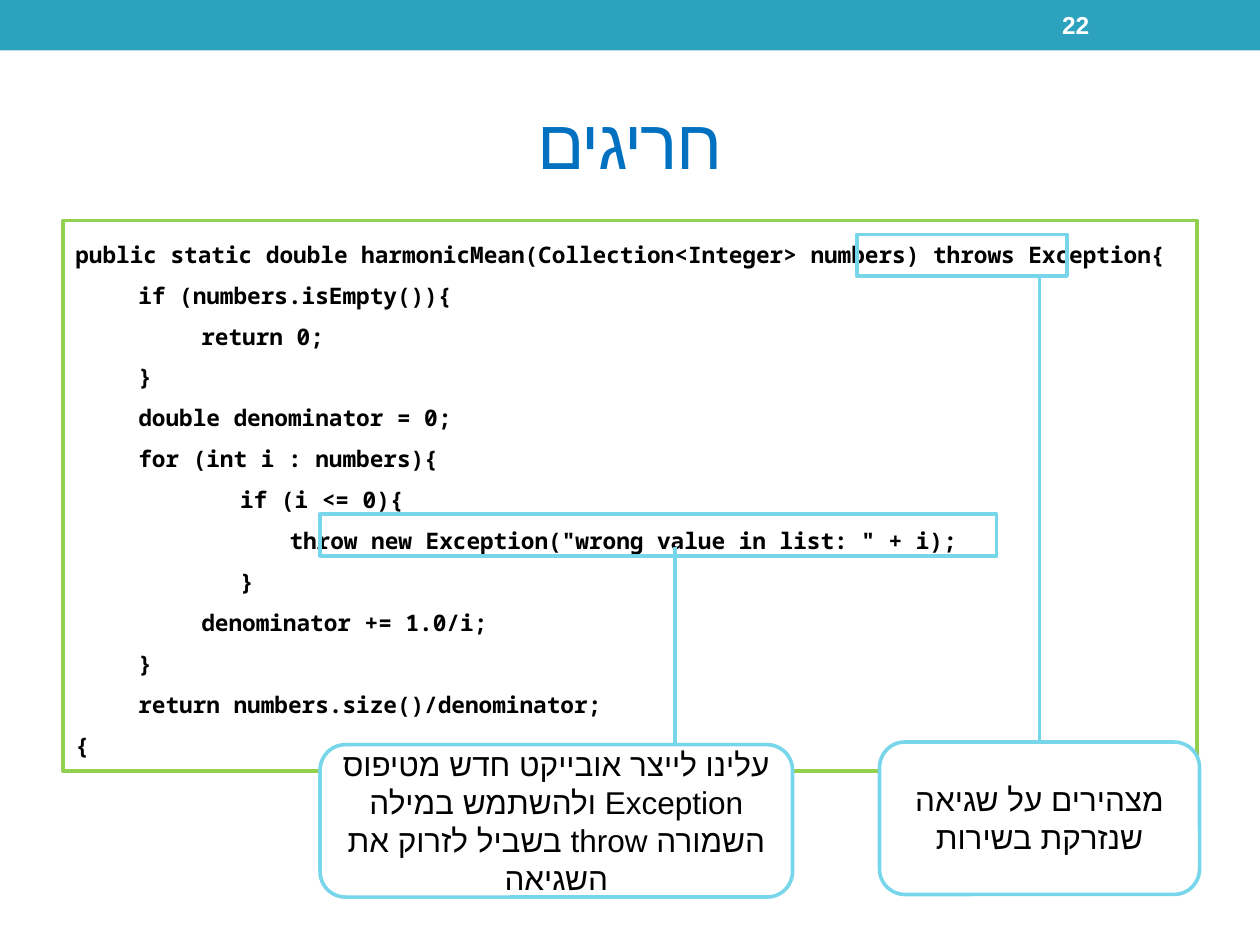
from dataclasses import dataclass

import pptx
import pptx.dml.color
import pptx.enum.shapes
import pptx.enum.text
import pptx.oxml
import pptx.oxml.ns
import pptx.util

Pt = pptx.util.Pt
RGBColor = pptx.dml.color.RGBColor
SHAPE = pptx.enum.shapes.MSO_SHAPE
ALIGN = pptx.enum.text.PP_ALIGN
ANCHOR = pptx.enum.text.MSO_ANCHOR
FIT = pptx.enum.text.MSO_AUTO_SIZE

TEAL = RGBColor(0x2D, 0xA2, 0xBF)
BLUE = RGBColor(0x00, 0x70, 0xC0)
GREEN = RGBColor(0x92, 0xD0, 0x50)
SKY = RGBColor(0x78, 0xD6, 0xEA)
WHITE = RGBColor(0xFF, 0xFF, 0xFF)
BLACK = RGBColor(0x00, 0x00, 0x00)
MARK_WIDTH = 2.08


@dataclass
class Box:
    left: float
    top: float
    width: float
    height: float


@dataclass
class Callout:
    """A highlighted piece of code, joined by a line to its explanation."""
    mark: Box
    note: Box
    line_x: float
    line_top: float
    text: str


@dataclass
class CodeLine:
    level: int
    text: str


CODE = [
    CodeLine(0, "public static double harmonicMean(Collection<Integer> numbers) throws Exception{"),
    CodeLine(1, "if (numbers.isEmpty()){"),
    CodeLine(2, "return 0;"),
    CodeLine(1, "}"),
    CodeLine(1, "double denominator = 0;"),
    CodeLine(1, "for (int i : numbers){"),
    CodeLine(1, "\t\t if (i <= 0){"),
    CodeLine(1, "\t\t\tthrow new Exception(\"wrong value in list: \" + i);"),
    CodeLine(1, "\t\t }"),
    CodeLine(2, "denominator += 1.0/i;"),
    CodeLine(1, "}"),
    CodeLine(1, "return numbers.size()/denominator;"),
    CodeLine(0, "{"),
]

CALLOUTS = [
    Callout(Box(489.6, 134, 120.2, 23.8), Box(502.6, 424, 182.9, 87.1), 594, 157.7,
            "מצהירים על שגיאה שנזרקת בשירות"),
    Callout(Box(182.9, 293.8, 386.6, 23.8), Box(182.9, 425.5, 270, 87.1), 385.9, 312.5,
            "עלינו לייצר אובייקט חדש מטיפוס Exception ולהשתמש במילה "
            "השמורה throw בשביל לזרוק את השגיאה"),
]


def write(p, text: str, *, size: float, color, font: str = "Arial", bold: bool = False,
          align=ALIGN.LEFT, rtl: bool = False, spacing: float = 0) -> None:
    p.alignment = align
    p._p.get_or_add_pPr().set("rtl", str(int(rtl)))
    r = p.add_run()
    r.text = text
    r.font.size, r.font.bold, r.font.name = Pt(size), bold, font
    r.font.color.rgb = color
    rPr = r._r.get_or_add_rPr()
    if spacing:
        rPr.set("spc", str(round(spacing * 100)))
    # Hebrew letters take the complex script font
    cs = pptx.oxml.parse_xml(f'<a:cs {pptx.oxml.ns.nsdecls("a")} typeface="{font}"/>')
    rPr.append(cs)


def place(sp, box: Box) -> None:
    sp.left, sp.top = Pt(box.left), Pt(box.top)
    sp.width, sp.height = Pt(box.width), Pt(box.height)


def add_box(slide, box: Box, *, kind=SHAPE.RECTANGLE, fill=None, line=None,
            width: float = MARK_WIDTH):
    sp = slide.shapes.add_shape(kind, Pt(box.left), Pt(box.top), Pt(box.width), Pt(box.height))
    sp.shadow.inherit = False
    if fill is None:
        sp.fill.background()
    else:
        sp.fill.solid()
        sp.fill.fore_color.rgb = fill
    if line is None:
        sp.line.fill.background()
    else:
        sp.line.color.rgb = line
        sp.line.width = Pt(width)
    return sp


def add_line(slide, x: float, top: float, bottom: float) -> None:
    cxn = slide.shapes.add_connector(pptx.enum.shapes.MSO_CONNECTOR.STRAIGHT,
                                     Pt(x), Pt(top), Pt(x), Pt(bottom))
    cxn.line.color.rgb = SKY
    cxn.line.width = Pt(MARK_WIDTH)
    effects = pptx.oxml.parse_xml(f'<a:effectLst {pptx.oxml.ns.nsdecls("a")}/>')
    cxn._element.spPr.append(effects)


def add_code(slide, box: Box, lines: list[CodeLine]) -> None:
    sp = add_box(slide, box, line=GREEN, width=2)
    tf = sp.text_frame
    tf.word_wrap = True
    tf.auto_size = FIT.SHAPE_TO_FIT_TEXT
    tf.vertical_anchor = ANCHOR.TOP
    for i, line in enumerate(lines):
        p = tf.add_paragraph() if i else tf.paragraphs[0]
        p.level = line.level
        p.line_spacing = 1.5
        pPr = p._p.get_or_add_pPr()
        pPr.set("marL", str(Pt(14.4 + 36 * line.level)))
        pPr.set("indent", str(Pt(-14.4)))
        write(p, line.text, size=13, color=BLACK, font="Noto Sans Mono", bold=True)


def add_note(slide, box: Box, text: str) -> None:
    sp = add_box(slide, box, kind=SHAPE.ROUNDED_RECTANGLE, fill=WHITE, line=SKY)
    tf = sp.text_frame
    tf.word_wrap = True
    tf.vertical_anchor = ANCHOR.MIDDLE
    write(tf.paragraphs[0], text, size=18, color=BLACK, align=ALIGN.CENTER, rtl=True)


def main() -> None:
    prs = pptx.Presentation()
    prs.slide_width, prs.slide_height = Pt(720), Pt(540)
    slide = prs.slides.add_slide(prs.slide_layouts[5])

    # Top band and title
    add_box(slide, Box(0, 0, 720, 28.8), fill=TEAL)
    title = slide.shapes.title
    place(title, Box(36, 41.8, 648, 77.8))
    title.text_frame.vertical_anchor = ANCHOR.MIDDLE
    write(title.text_frame.paragraphs[0], "חריגים", size=40, color=BLUE,
          align=ALIGN.CENTER, rtl=True, spacing=-1)

    # Slide number
    number = slide.shapes.add_textbox(Pt(599.8), Pt(1.4), Pt(84.2), Pt(25.9))
    number.text_frame.word_wrap = True
    number.text_frame.vertical_anchor = ANCHOR.MIDDLE
    write(number.text_frame.paragraphs[0], "22", size=14, color=WHITE, bold=True, rtl=True)

    # Code, then its marks, lines and notes
    add_code(slide, Box(36, 126, 648, 314.6), CODE)
    for c in CALLOUTS:
        add_box(slide, c.mark, line=SKY)
    for c in CALLOUTS:
        add_line(slide, c.line_x, c.line_top, c.note.top)
    for c in reversed(CALLOUTS):
        add_note(slide, c.note, c.text)

    prs.save("out.pptx")


if __name__ == "__main__":
    main()
